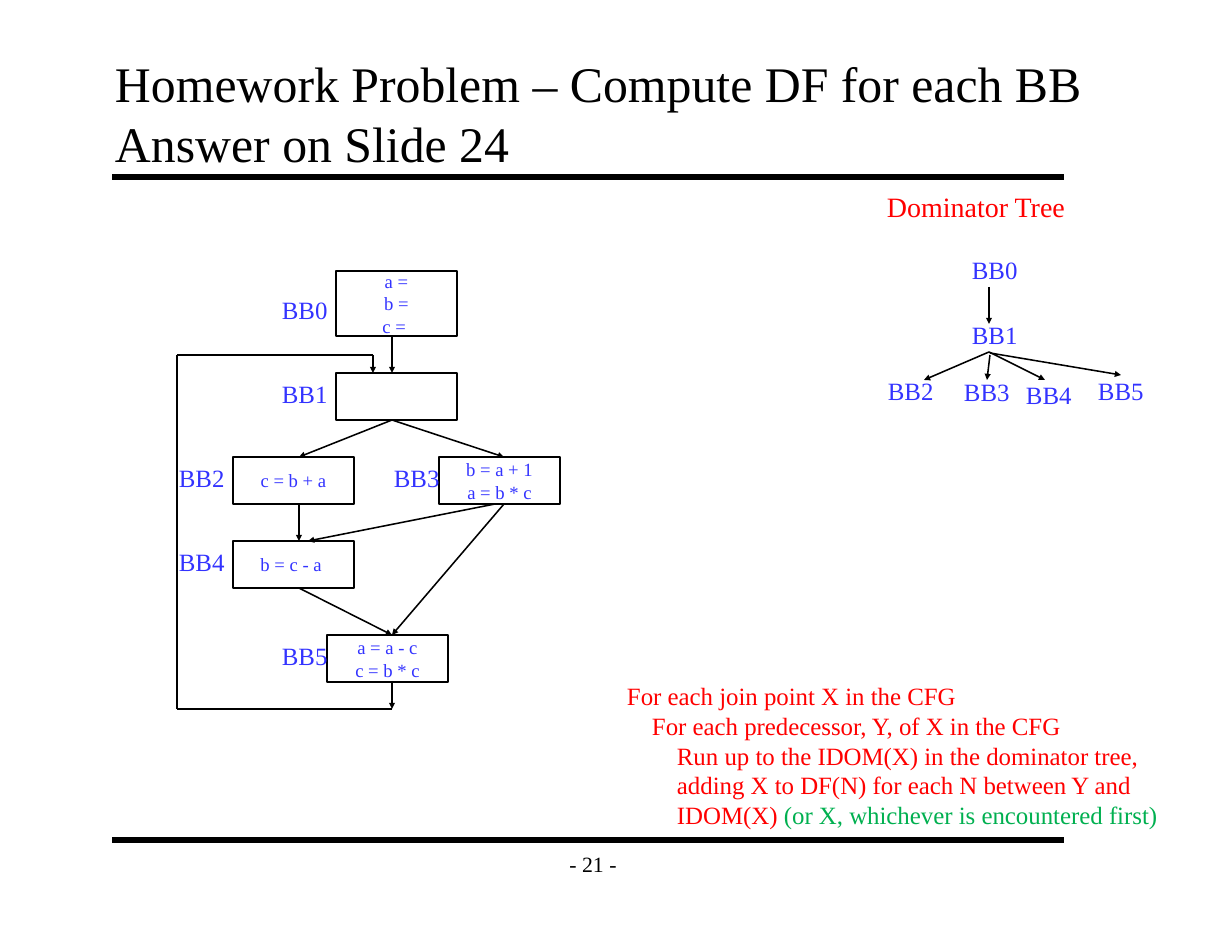
import pptx
import pptx.util
import pptx.dml.color
import pptx.enum.shapes
import pptx.enum.text
import pptx.oxml
import pptx.oxml.ns

PX = 914400 / 112
FONT = "Times New Roman"
COLORS = {"black": "000000", "blue": "3333FF", "red": "FF0000", "green": "00B050"}
ALIGN = pptx.enum.text.PP_ALIGN
ANCHOR = pptx.enum.text.MSO_ANCHOR
RECTANGLE = pptx.enum.shapes.MSO_SHAPE.RECTANGLE
STRAIGHT = pptx.enum.shapes.MSO_CONNECTOR.STRAIGHT


def emu(*lengths):
    return [pptx.util.Emu(round(length * PX)) for length in lengths]


def write(shape, lines, size, color, align=ALIGN.LEFT, anchor=ANCHOR.TOP):
    frame = shape.text_frame
    frame.text = "\n".join(lines)
    frame.word_wrap = False
    frame.vertical_anchor = anchor
    for para in frame.paragraphs:
        para.alignment = align
        para.font.name = FONT
        para.font.size = pptx.util.Pt(size)
        para.font.color.rgb = pptx.dml.color.RGBColor.from_string(COLORS[color])


deck = pptx.Presentation()
deck.slide_width, deck.slide_height = emu(1232, 952)
page = deck.slides.add_slide(deck.slide_layouts[5])
shapes = page.shapes

# Title and page number
title = shapes.title
title.left, title.top, title.width, title.height = emu(103, 103, 1018, 75)
write(title, ["Homework Problem – Compute DF for each BB\vAnswer on Slide 24"],
      32, "black", anchor=ANCHOR.BOTTOM)
title.text_frame.word_wrap = True
title.text_frame.auto_size = pptx.enum.text.MSO_AUTO_SIZE.NONE
title.text_frame.margin_left, title.text_frame.margin_bottom = emu(12, 6)

number = shapes.add_textbox(*emu(551, 840, 84, 47))
write(number, ["- 21 -"], 14, "black", ALIGN.CENTER, ANCHOR.MIDDLE)

# Basic blocks of the control flow graph: left, top, height, code
blocks = [
    (336, 271, 65, ["a =", "b =", "c = "]),
    (336, 373, 47, []),
    (233, 457, 47, ["c = b + a"]),
    (439, 457, 47, ["b = a + 1", "a = b * c"]),
    (233, 541, 47, ["b = c - a "]),
    (327, 635, 47, ["a = a - c", "c = b * c"]),
]
for left, top, height, code in blocks:
    box = shapes.add_shape(RECTANGLE, *emu(left, top, 121, height))
    box.shadow.inherit = False
    box.fill.background()
    box.line.width = pptx.util.Pt(1)
    box.line.color.rgb = pptx.dml.color.RGBColor.from_string(COLORS["black"])
    if code:
        write(box, code, 12, "blue", ALIGN.CENTER, ANCHOR.MIDDLE)

# Block names, BB0 to BB5, in the flow graph and in the dominator tree
flow_names = [(271, 289), (271, 373), (168, 457), (383, 457), (168, 541), (271, 635)]
tree_names = [(961, 249), (961, 314), (877, 370), (953, 371), (1015, 374), (1087, 370)]
for names in (flow_names, tree_names):
    for index, (left, top) in enumerate(names):
        label = shapes.add_textbox(*emu(left, top, 68, 41))
        write(label, [f"BB{index}"], 16, "blue")

# Lines: start x, start y, end x, end y
rules = [(112, 177, 1064, 177), (112, 840, 1064, 840)]
back_edge = [(392, 709, 177, 709), (177, 709, 177, 355), (177, 355, 373, 355)]
flow_arrows = [
    (392, 336, 392, 373), (392, 420, 299, 457), (392, 420, 504, 457),
    (299, 504, 299, 541), (495, 504, 308, 541), (299, 588, 392, 635),
    (504, 504, 392, 635), (392, 681, 392, 709), (373, 355, 373, 373),
]
tree_arrows = [
    (989, 287, 989, 324), (989, 352, 924, 380), (990, 355, 987, 380),
    (989, 352, 1045, 380), (990, 353, 1121, 375),
]
for lines, width, arrow in [(rules, 4, False), (back_edge, 1, False),
                            (flow_arrows + tree_arrows, 1, True)]:
    for ends in lines:
        line = shapes.add_connector(STRAIGHT, *emu(*ends))
        line.line.width = pptx.util.Pt(width)
        line.line.color.rgb = pptx.dml.color.RGBColor.from_string(COLORS["black"])
        if arrow:
            head = pptx.oxml.parse_xml(
                f'<a:tailEnd {pptx.oxml.ns.nsdecls("a")} type="triangle" w="sm" len="sm"/>')
            line.line._get_or_add_ln().append(head)
        line._element.spPr.append(
            pptx.oxml.parse_xml(f'<a:effectLst {pptx.oxml.ns.nsdecls("a")}/>'))

# Heading of the tree and the algorithm
heading = shapes.add_textbox(*emu(876, 184, 203, 45))
write(heading, ["Dominator Tree"], 18, "red")

algorithm = shapes.add_textbox(*emu(616, 675, 560, 162))
write(algorithm, [
    "For each join point X in the CFG",
    "For each predecessor, Y, of X in the CFG",
    "Run up to the IDOM(X) in the dominator tree,",
    "adding X to DF(N) for each N between Y and",
    "IDOM(X) ",
], 16, "red")
paras = algorithm.text_frame.paragraphs
for para, depth in zip(paras, [0, 1, 2, 2, 2]):
    para._p.get_or_add_pPr().set("marL", str(emu(25 * depth)[0]))
span = paras[-1].add_run()
span.text = "(or X, whichever is encountered first)"
span.font.color.rgb = pptx.dml.color.RGBColor.from_string(COLORS["green"])

deck.save("out.pptx")
